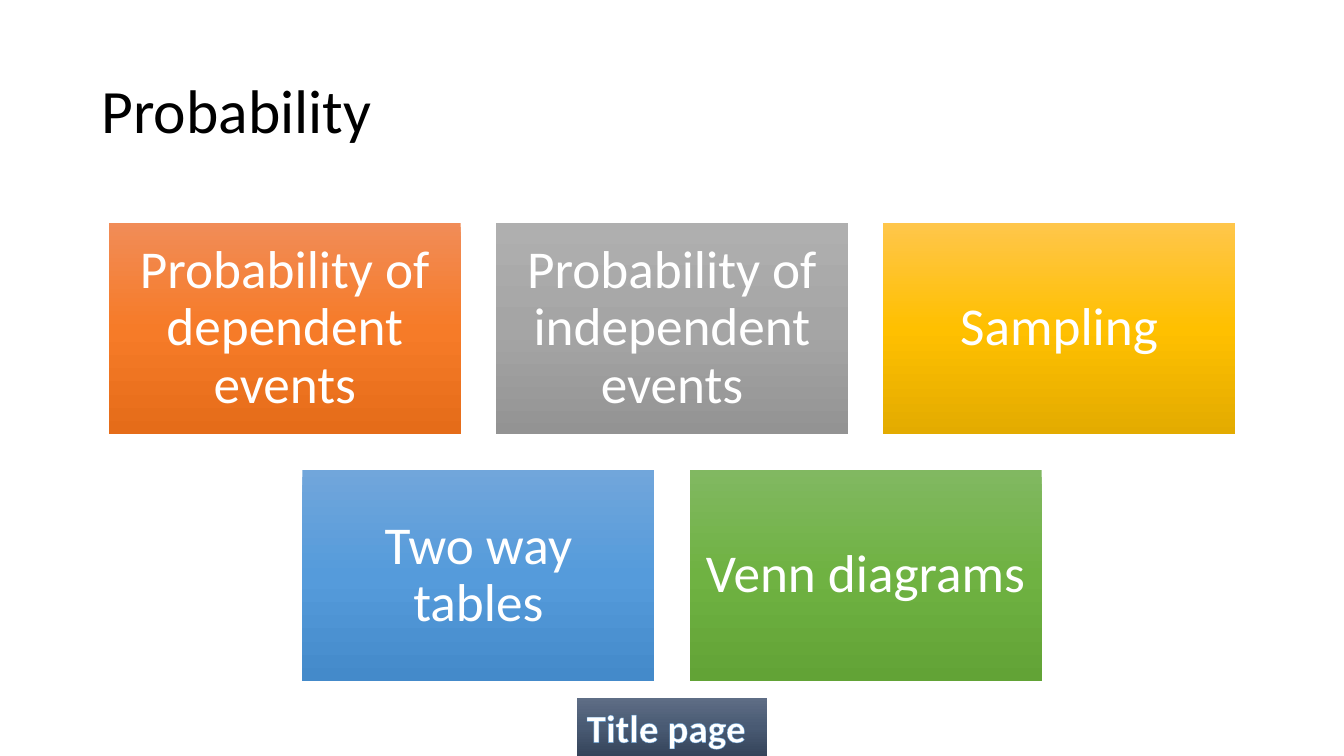
from copy import deepcopy

from lxml import etree
from pptx import Presentation
from pptx import util as u
from pptx.dml.color import RGBColor
from pptx.enum import shapes, text
from pptx.oxml.ns import qn

PX = 9144  # EMU in one px, 100 px to the inch
WIDTH, HEIGHT = 1333, 750
BLACK = RGBColor(0x00, 0x00, 0x00)
WHITE = RGBColor(0xFF, 0xFF, 0xFF)
EDGE = RGBColor(0x5B, 0x9B, 0xD5)


def shades(*codes):
    return [RGBColor.from_string(code) for code in codes]


ORANGE = shades("F18C57", "F67B28", "E56C19")
GREY = shades("AFAFAF", "A5A5A5", "939393")
GOLD = shades("FFC64B", "FFC000", "E3AB00")
BLUE = shades("71A6DB", "559BDB", "448ACA")
GREEN = shades("81B861", "6FB242", "62A336")
SLATE = shades("5E6D85", "495A73", "35445A")

TILE_W, TILE_H = 349, 210
STEP_X, STEP_Y = 384, 245
TOP = 221
ROWS = [
    [("Probability of dependent events", ORANGE),
     ("Probability of independent events", GREY),
     ("Sampling", GOLD)],
    [("Two way tables", BLUE),
     ("Venn diagrams", GREEN)],
]


class Page:
    font = "Calibri"

    def __init__(self, deck):
        self.slide = deck.slides.add_slide(deck.slide_layouts[6])

    def label(self, shape, words, size, color, align, anchor, pad):
        """Put one styled paragraph in the shape and return its run."""
        frame = shape.text_frame
        frame.word_wrap = True
        frame.vertical_anchor = anchor
        frame.margin_left = frame.margin_right = pad[0] * PX
        frame.margin_top = frame.margin_bottom = pad[1] * PX
        frame.text = words
        para = frame.paragraphs[0]
        para.alignment = align
        para.line_spacing = 0.9
        run = para.runs[0]
        run.font.name = self.font
        run.font.size = u.Pt(size)
        run.font.color.rgb = color
        return run

    def title(self, words, *box):
        shape = self.slide.shapes.add_textbox(*(n * PX for n in box))
        self.label(shape, words, 44, BLACK, text.PP_ALIGN.LEFT,
                   text.MSO_ANCHOR.MIDDLE, (10, 5))

    def block(self, colors, *box):
        """Add a rectangle shaded from top to bottom through three colours."""
        shape = self.slide.shapes.add_shape(
            shapes.MSO_SHAPE.RECTANGLE, *(n * PX for n in box))
        shape.shadow.inherit = False
        shape.line.fill.background()
        fill = shape.fill
        fill.gradient()
        fill.gradient_angle = 270
        stops = shape._element.spPr.find(".//" + qn("a:gsLst"))
        stops.append(deepcopy(stops[-1]))
        for stop, color, place in zip(fill.gradient_stops, colors, (0, 0.5, 1)):
            stop.position = place
            stop.color.rgb = color
        return shape

    def tile(self, words, colors, *box):
        self.label(self.block(colors, *box), words, 38, WHITE,
                   text.PP_ALIGN.CENTER, text.MSO_ANCHOR.MIDDLE, (15, 15))

    def button(self, words, colors, *box):
        shape = self.block(colors, *box)
        run = self.label(shape, words, 28, WHITE, text.PP_ALIGN.LEFT,
                         text.MSO_ANCHOR.TOP, (10, 5))
        run.font.bold = True
        shape.text_frame.paragraphs[0].line_spacing = 1.0
        shape.text_frame.auto_size = text.MSO_AUTO_SIZE.SHAPE_TO_FIT_TEXT
        line = etree.Element(qn("a:ln"), w=str(u.Pt(0.8)))
        fill = etree.SubElement(line, qn("a:solidFill"))
        etree.SubElement(fill, qn("a:srgbClr"), val=str(EDGE))
        run._r.get_or_add_rPr().insert(0, line)


def main():
    deck = Presentation()
    deck.slide_width, deck.slide_height = WIDTH * PX, HEIGHT * PX
    page = Page(deck)
    page.title("Probability", 91, 40, 1151, 145)
    for row, tiles in enumerate(ROWS):
        span = (len(tiles) - 1) * STEP_X + TILE_W
        left = (WIDTH - span) // 2
        for col, (words, colors) in enumerate(tiles):
            page.tile(words, colors, left + col * STEP_X, TOP + row * STEP_Y,
                      TILE_W, TILE_H)
    page.button("Title page", SLATE, 572, 693, 189, 57)
    deck.save("out.pptx")


if __name__ == "__main__":
    main()
